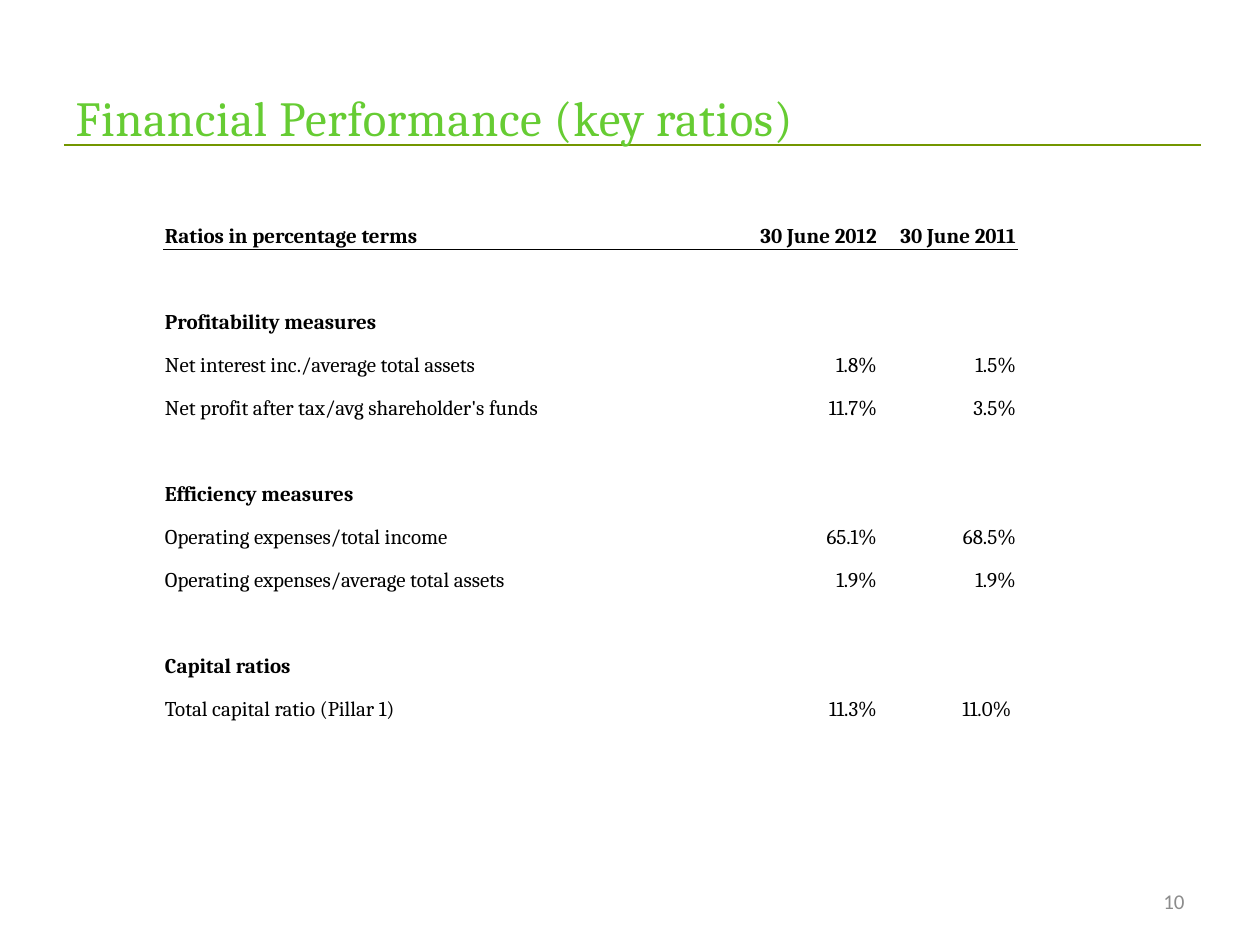
"""Build the key financial ratios slide."""
import pptx
import pptx.dml.color
import pptx.enum.shapes
import pptx.enum.text
import pptx.oxml
import pptx.oxml.ns
import pptx.util

ALIGN = pptx.enum.text.PP_ALIGN
ANCHOR = pptx.enum.text.MSO_ANCHOR
A_NS = pptx.oxml.ns.nsdecls("a")

RATIOS = [
    ("Ratios in percentage terms", "30 June 2012", "30 June 2011"),
    (),
    ("Profitability measures",),
    ("Net interest inc./average total assets", "1.8%", "1.5%"),
    ("Net profit after tax/avg shareholder's funds", "11.7%", "3.5%"),
    (),
    ("Efficiency measures",),
    ("Operating expenses/total income", "65.1%", "68.5%"),
    ("Operating expenses/average total assets", "1.9%", "1.9%"),
    (),
    ("Capital ratios",),
    ("Total capital ratio (Pillar 1)", "11.3%", "11.0% "),
    (),
]


def px(n):
    return pptx.util.Emu(round(n * 914400 / 126))


def rgb(value):
    return pptx.dml.color.RGBColor.from_string(value)


class Deck:
    """Hold the style and the current slide."""
    green, rule_green, black, grey = "66CC33", "739600", "000000", "8C8C8C"
    serif, sans = "Cambria", "Calibri"

    def __init__(self, prs):
        self.s = prs.slides.add_slide(prs.slide_layouts[5])

    def label(self, tf, text, size, color, font, align=ALIGN.LEFT, bold=False):
        p = tf.paragraphs[0]
        p.alignment = align
        r = p.add_run()
        r.text = text
        p.font.size = pptx.util.Pt(size)
        p.font.name = font
        p.font.bold = bold
        p.font.color.rgb = rgb(color)
        return r

    def rule(self, x1, x2, y):
        line = self.s.shapes.add_connector(
            pptx.enum.shapes.MSO_CONNECTOR.STRAIGHT, px(x1), px(y), px(x2), px(y))
        line.line.color.rgb = rgb(self.rule_green)
        line.line.width = pptx.util.Pt(0.75)
        line._element.spPr.append(pptx.oxml.parse_xml(f"<a:effectLst {A_NS}/>"))
        self.s.shapes._spTree.insert(2, line._element)

    def title(self, text, x, y, w, h):
        sp = self.s.shapes.title
        sp.left, sp.top, sp.width, sp.height = px(x), px(y), px(w), px(h)
        tf = sp.text_frame
        tf.vertical_anchor = ANCHOR.MIDDLE
        r = self.label(tf, text, 28, self.green, self.serif)
        r._r.get_or_add_rPr().set("spc", "40")

    def text(self, text, x, y, w, h):
        tf = self.s.shapes.add_textbox(px(x), px(y), px(w), px(h)).text_frame
        tf.word_wrap = True
        tf.vertical_anchor = ANCHOR.MIDDLE
        self.label(tf, text, 12, self.grey, self.sans, ALIGN.RIGHT)

    def border(self, cell, side):
        cell._tc.get_or_add_tcPr().append(pptx.oxml.parse_xml(
            f'<a:{side} {A_NS} w="6350"><a:solidFill><a:srgbClr val="{self.black}"/>'
            f"</a:solidFill></a:{side}>"))

    def table(self, rows, x, y, widths, head_h, row_h):
        height = head_h + row_h * (len(rows) - 1)
        table = self.s.shapes.add_table(
            len(rows), len(widths), px(x), px(y), px(sum(widths)), px(height)).table
        table.first_row = table.horz_banding = False
        for col, width in zip(table.columns, widths):
            col.width = px(width)
        for i, values in enumerate(rows):
            table.rows[i].height = px(row_h if i else head_h)
            texts = dict(zip((0, 2, 3), values))
            for j in range(len(widths)):
                cell = table.cell(i, j)
                cell.margin_left = cell.margin_right = cell.margin_top = px(1)
                cell.margin_bottom = 0
                cell.vertical_anchor = ANCHOR.BOTTOM
                if i < 2:
                    self.border(cell, "lnT" if i else "lnB")
                cell.fill.background()
                if j in texts:
                    self.label(cell.text_frame, texts[j], 12, self.black, self.serif,
                               ALIGN.RIGHT if j else ALIGN.LEFT,
                               i == 0 or len(values) == 1)


def main():
    prs = pptx.Presentation()
    prs.slide_width, prs.slide_height = px(1260), px(945)
    deck = Deck(prs)
    deck.rule(64, 1201, 145)
    deck.title("Financial Performance (key ratios)", 63, 38, 1134, 158)
    deck.table(RATIOS, 164, 185, (556, 30, 128, 139), 64, 43)
    deck.text("10", 903, 876, 294, 50)
    prs.save("out.pptx")


if __name__ == "__main__":
    main()
